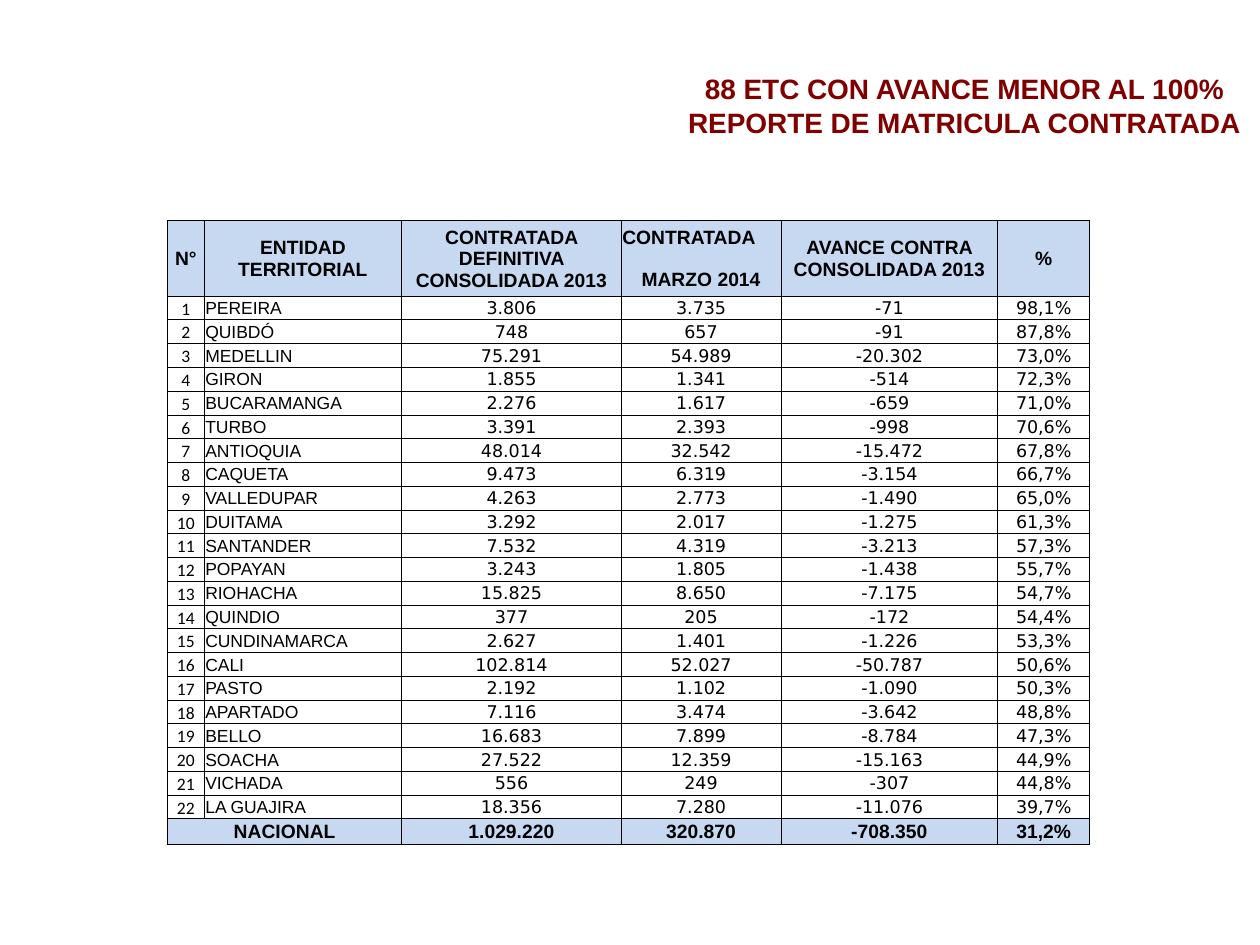
from dataclasses import dataclass

from lxml import etree
from pptx import Presentation
from pptx.dml.color import RGBColor
from pptx.enum import text
from pptx.oxml import ns
from pptx.util import Inches, Pt

TITLE = "88 ETC CON AVANCE MENOR AL 100% REPORTE DE MATRICULA CONTRATADA"
HEADERS = [
    "N°",
    "ENTIDAD TERRITORIAL",
    "CONTRATADA DEFINITIVA CONSOLIDADA 2013",
    "CONTRATADA\nMARZO 2014",
    "AVANCE CONTRA CONSOLIDADA 2013",
    "%",
]
ENTITIES = [
    ("PEREIRA", "3.806", "3.735", "-71", "98,1%"),
    ("QUIBDÓ", "748", "657", "-91", "87,8%"),
    ("MEDELLIN", "75.291", "54.989", "-20.302", "73,0%"),
    ("GIRON", "1.855", "1.341", "-514", "72,3%"),
    ("BUCARAMANGA", "2.276", "1.617", "-659", "71,0%"),
    ("TURBO", "3.391", "2.393", "-998", "70,6%"),
    ("ANTIOQUIA", "48.014", "32.542", "-15.472", "67,8%"),
    ("CAQUETA", "9.473", "6.319", "-3.154", "66,7%"),
    ("VALLEDUPAR", "4.263", "2.773", "-1.490", "65,0%"),
    ("DUITAMA", "3.292", "2.017", "-1.275", "61,3%"),
    ("SANTANDER", "7.532", "4.319", "-3.213", "57,3%"),
    ("POPAYAN", "3.243", "1.805", "-1.438", "55,7%"),
    ("RIOHACHA", "15.825", "8.650", "-7.175", "54,7%"),
    ("QUINDIO", "377", "205", "-172", "54,4%"),
    ("CUNDINAMARCA", "2.627", "1.401", "-1.226", "53,3%"),
    ("CALI", "102.814", "52.027", "-50.787", "50,6%"),
    ("PASTO", "2.192", "1.102", "-1.090", "50,3%"),
    ("APARTADO", "7.116", "3.474", "-3.642", "48,8%"),
    ("BELLO", "16.683", "7.899", "-8.784", "47,3%"),
    ("SOACHA", "27.522", "12.359", "-15.163", "44,9%"),
    ("VICHADA", "556", "249", "-307", "44,8%"),
    ("LA GUAJIRA", "18.356", "7.280", "-11.076", "39,7%"),
]
TOTAL = ["NACIONAL", "", "1.029.220", "320.870", "-708.350", "31,2%"]

TABLE_LEFT, TABLE_TOP, TABLE_HEIGHT = 1.33, 1.75, 4.95
COLUMN_WIDTHS = [0.29, 1.57, 1.74, 1.27, 1.72, 0.73]
HEADER_HEIGHT, TOTAL_HEIGHT = 0.6, 0.2


@dataclass(frozen=True)
class Theme:
    ink: RGBColor = RGBColor(0, 0, 0)
    title: RGBColor = RGBColor(0x80, 0, 0)
    band: RGBColor = RGBColor(0xC6, 0xD9, 0xF1)
    main_font: str = "Arial"
    index_font: str = "Calibri"
    figure_font: str = "DejaVu Sans"
    title_size: Pt = Pt(16)
    band_size: Pt = Pt(11)
    body_size: Pt = Pt(10)
    border: Pt = Pt(0.5)


THEME = Theme()
BODY_FONTS = [THEME.index_font, THEME.main_font] + [THEME.figure_font] * 4


def set_font(para, name, size, color, bold):
    font = para.font
    font.name, font.size, font.bold = name, size, bold
    font.color.rgb = color


def add_borders(cell):
    properties = cell._tc.get_or_add_tcPr()
    for side in ("lnL", "lnR", "lnT", "lnB"):
        line = etree.SubElement(properties, ns.qn(f"a:{side}"), w=str(THEME.border))
        fill = etree.SubElement(line, ns.qn("a:solidFill"))
        etree.SubElement(fill, ns.qn("a:srgbClr"), val=str(THEME.ink))


def fill_cell(cell, words, column, banded):
    cell.margin_left = cell.margin_right = cell.margin_top = Inches(0.01)
    cell.margin_bottom = 0
    is_index = column == 0 and not banded
    cell.vertical_anchor = text.MSO_ANCHOR.BOTTOM if is_index else text.MSO_ANCHOR.MIDDLE
    add_borders(cell)
    if banded:
        cell.fill.solid()
        cell.fill.fore_color.rgb = THEME.band
    else:
        cell.fill.background()
    cell.text_frame.text = words
    is_name = column == 1 and not banded
    for para in cell.text_frame.paragraphs:
        para.alignment = text.PP_ALIGN.LEFT if is_name else text.PP_ALIGN.CENTER
        set_font(
            para,
            THEME.main_font if banded else BODY_FONTS[column],
            THEME.band_size if banded else THEME.body_size,
            THEME.ink,
            banded,
        )


def add_enrolment_table(page):
    body = [(str(number), *entity) for number, entity in enumerate(ENTITIES, 1)]
    rows = [HEADERS, *body, TOTAL]
    body_height = (TABLE_HEIGHT - HEADER_HEIGHT - TOTAL_HEIGHT) / len(body)
    heights = [HEADER_HEIGHT] + [body_height] * len(body) + [TOTAL_HEIGHT]
    table = page.shapes.add_table(
        len(rows), len(HEADERS), Inches(TABLE_LEFT), Inches(TABLE_TOP),
        Inches(sum(COLUMN_WIDTHS)), Inches(TABLE_HEIGHT),
    ).table
    for column, width in zip(table.columns, COLUMN_WIDTHS):
        column.width = Inches(width)
    last = len(rows) - 1
    for r, (words, height) in enumerate(zip(rows, heights)):
        table.rows[r].height = Inches(height)
        for c, word in enumerate(words):
            fill_cell(table.cell(r, c), word, c, banded=r in (0, last))
    table.cell(last, 0).merge(table.cell(last, 1))

    contracted, month = table.cell(0, 3).text_frame.paragraphs
    contracted.alignment = text.PP_ALIGN.LEFT
    month.space_before = Pt(12)


def format_title(title):
    title.left, title.top = Inches(5.31), Inches(0.52)
    title.width, title.height = Inches(4.69), Inches(0.64)
    frame = title.text_frame
    frame.text = TITLE
    frame.word_wrap = True
    frame.auto_size = text.MSO_AUTO_SIZE.NONE
    frame.vertical_anchor = text.MSO_ANCHOR.TOP
    para = frame.paragraphs[0]
    para.alignment = text.PP_ALIGN.CENTER
    set_font(para, THEME.main_font, THEME.title_size, THEME.title, True)


def main():
    deck = Presentation()
    deck.slide_width, deck.slide_height = Inches(10), Inches(7.5)
    page = deck.slides.add_slide(deck.slide_layouts[5])
    format_title(page.shapes.title)
    add_enrolment_table(page)
    deck.save("out.pptx")


if __name__ == "__main__":
    main()
